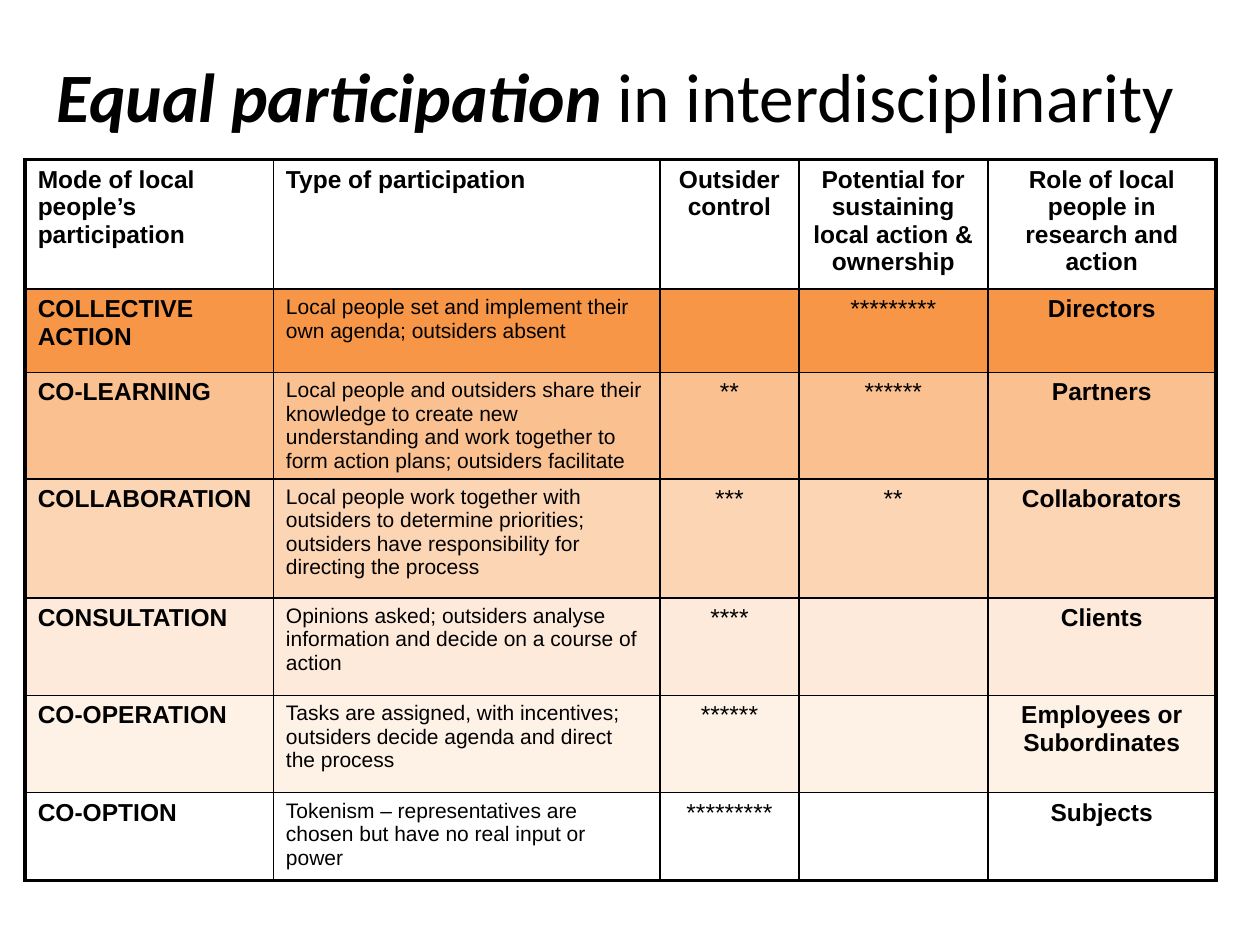
from lxml import etree
from pptx import Presentation
from pptx.dml.color import RGBColor
from pptx.enum.text import MSO_ANCHOR, MSO_AUTO_SIZE, PP_ALIGN
from pptx.oxml.ns import qn
from pptx.util import Inches, Pt

LEFT, CENTER = PP_ALIGN.LEFT, PP_ALIGN.CENTER
MIDDLE, NO_FIT = MSO_ANCHOR.MIDDLE, MSO_AUTO_SIZE.NONE
COLORS = {
    "ink": "000000", "none": "FFFFFF", "directors": "F79646", "partners": "FAC090",
    "collaborators": "FCD5B5", "clients": "FDEADA", "employees": "FEF1E6",
}
COL_WIDTHS = [19.7, 30.7, 11, 15, 18.1]
ROW_HEIGHTS = [13.7, 8.8, 11.3, 12.6, 10.3, 10.3, 9.3]
COL_ALIGN = [LEFT, LEFT, CENTER, CENTER, CENTER]
BODY_SIZES = [14, 12, 14, 14, 14]
BOLD_COLS = (0, 4)
HEADER = ["Mode of local people’s participation", "Type of participation", "Outsider control",
          "Potential for sustaining local action & ownership",
          "Role of local people in research and action"]
MODES = [
    ("directors", "COLLECTIVE ACTION",
     "Local people set and implement their own agenda; outsiders absent", 0, 9, "Directors"),
    ("partners", "CO-LEARNING",
     "Local people and outsiders share their knowledge to create new understanding "
     "and work together to form action plans; outsiders facilitate", 2, 6, "Partners"),
    ("collaborators", "COLLABORATION",
     "Local people work together with outsiders to determine priorities; "
     "outsiders have responsibility for directing the process", 3, 2, "Collaborators"),
    ("clients", "CONSULTATION",
     "Opinions asked; outsiders analyse information and decide on a course of action",
     4, 0, "Clients"),
    ("employees", "CO-OPERATION",
     "Tasks are assigned, with incentives; outsiders decide agenda and direct the process",
     6, 0, "Employees or Subordinates"),
    ("none", "CO-OPTION",
     "Tokenism – representatives are chosen but have no real input or power",
     9, 0, "Subjects"),
]


class Deck:
    """Holds the style and current slide; lengths are percentages of the slide size."""

    def __init__(self):
        self.prs = Presentation()
        self.prs.slide_width, self.prs.slide_height = Inches(10), Inches(7.5)
        self.s = self.prs.slides.add_slide(self.prs.slide_layouts[5])

    def x(self, share):
        return int(self.prs.slide_width * share / 100)

    def y(self, share):
        return int(self.prs.slide_height * share / 100)

    def style(self, r, font, size, bold, italic=False):
        r.font.name, r.font.size = font, Pt(size)
        r.font.bold, r.font.italic = bold, italic
        r.font.color.rgb = RGBColor.from_string(COLORS["ink"])

    def title(self, left, top, width, height, emphasis, rest):
        sp = self.s.shapes.title
        sp.left, sp.top = self.x(left), self.y(top)
        sp.width, sp.height = self.x(width), self.y(height)
        tf = sp.text_frame
        tf.vertical_anchor, tf.auto_size, tf.word_wrap = MIDDLE, NO_FIT, True
        p = tf.paragraphs[0]
        p.alignment = LEFT
        for text, strong in ((emphasis, True), (rest, False)):
            r = p.add_run()
            r.text = text
            self.style(r, "Calibri", 39.6, strong, strong)

    def table(self, left, top, widths, heights, rows, fills):
        frame = self.s.shapes.add_table(len(heights), len(widths), self.x(left), self.y(top),
                                        self.x(sum(widths)), self.y(sum(heights)))
        tbl = frame.table
        tbl.first_row = tbl.horz_banding = False
        for col, width in zip(tbl.columns, widths):
            col.width = self.x(width)
        for row, height in zip(tbl.rows, heights):
            row.height = self.y(height)
        for i, (texts, fill) in enumerate(zip(rows, fills)):
            for j, text in enumerate(texts):
                outer = {"L": j == 0, "R": j == len(widths) - 1,
                         "T": i == 0, "B": i == len(rows) - 1}
                size = 14 if i == 0 else BODY_SIZES[j]
                self.cell(tbl.cell(i, j), text, fill, outer, COL_ALIGN[j], size,
                          i == 0 or j in BOLD_COLS)

    def cell(self, cell, text, fill, outer, align, size, bold):
        self.borders(cell, outer)
        cell.fill.solid()
        cell.fill.fore_color.rgb = RGBColor.from_string(COLORS[fill])
        if text:
            p = cell.text_frame.paragraphs[0]
            p.text, p.alignment = text, align
            self.style(p.runs[0], "Arial", size, bold)

    def borders(self, cell, outer):
        tc_pr = cell._tc.get_or_add_tcPr()
        for side, thick in outer.items():
            ln = etree.SubElement(tc_pr, qn(f"a:ln{side}"), w=str(Pt(2.25 if thick else 1)))
            solid = etree.SubElement(ln, qn("a:solidFill"))
            etree.SubElement(solid, qn("a:srgbClr"), val=COLORS["ink"])


def main():
    deck = Deck()
    deck.title(3.5, 1.7, 92.2, 16.7, "Equal participation", " in interdisciplinarity")
    rows = [HEADER] + [[mode, kind, "*" * control, "*" * potential, role]
                       for _, mode, kind, control, potential, role in MODES]
    fills = ["none"] + [mode[0] for mode in MODES]
    deck.table(2, 16.9, COL_WIDTHS, ROW_HEIGHTS, rows, fills)
    deck.prs.save("out.pptx")


if __name__ == "__main__":
    main()
